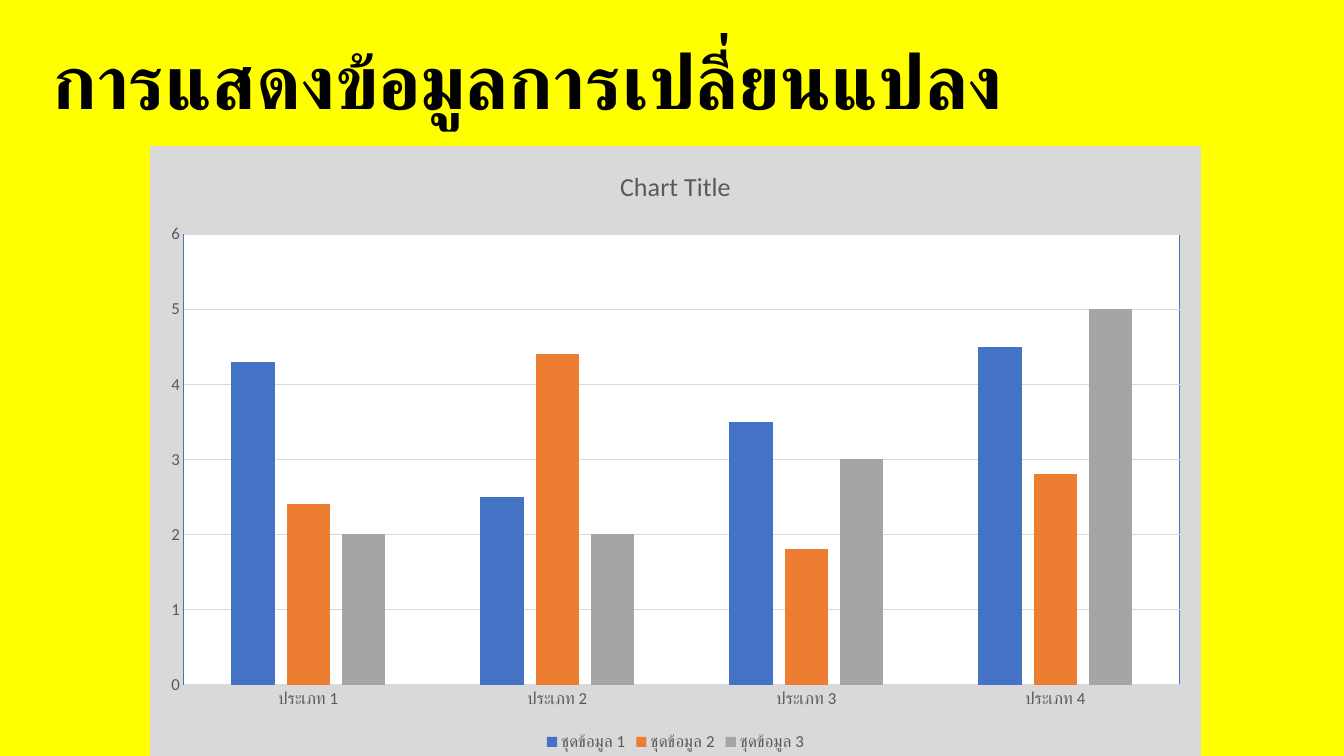
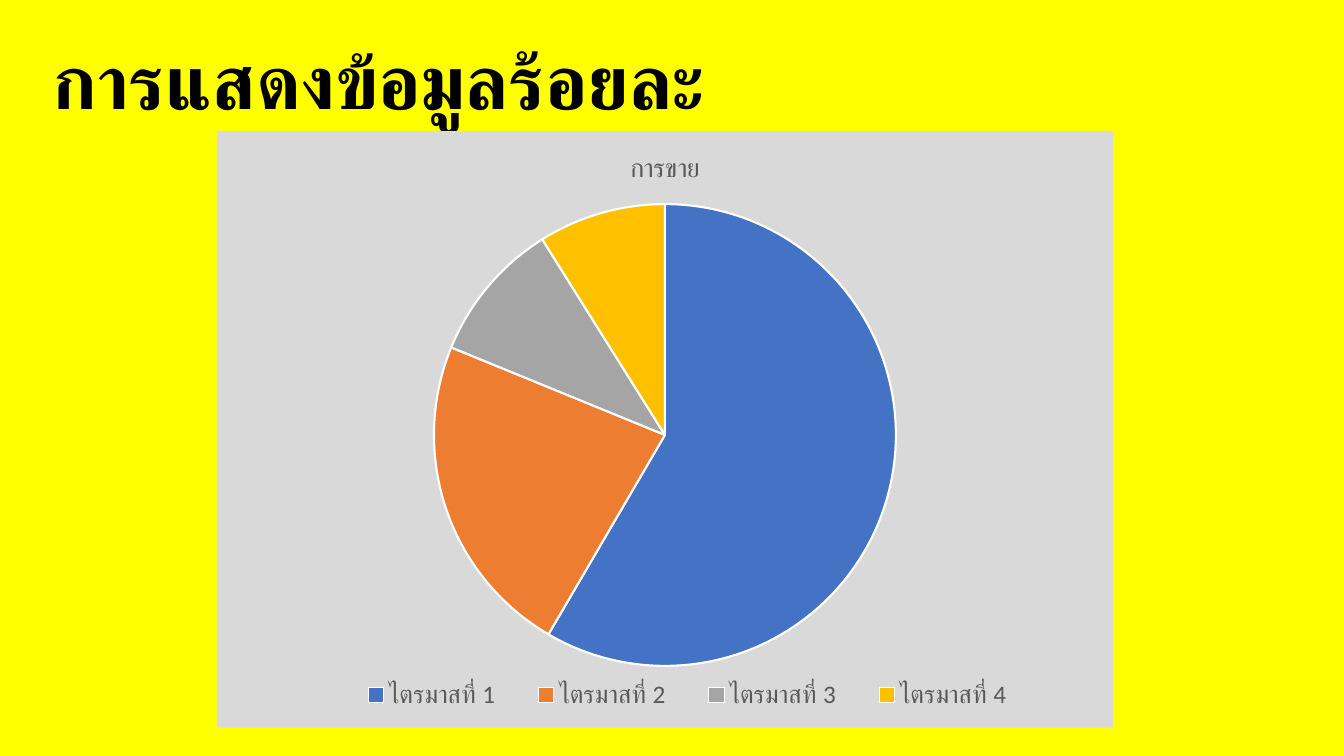
from dataclasses import dataclass
from lxml.etree import SubElement
from pptx import Presentation
from pptx.chart.data import CategoryChartData
from pptx.dml.color import RGBColor
from pptx.enum.chart import XL_CHART_TYPE, XL_LEGEND_POSITION, XL_TICK_MARK
from pptx.enum.text import MSO_ANCHOR, MSO_AUTO_SIZE, PP_ALIGN
from pptx.oxml import parse_xml
from pptx.oxml.ns import nsdecls, qn
from pptx.util import Inches, Pt


@dataclass(frozen=True)
class Theme:
    font: str = "Calibri"
    page: str = "FFFF00"
    ink: str = "000000"
    muted: str = "595959"
    rule: str = "D9D9D9"
    panel: str = "D9D9D9"
    white: str = "FFFFFF"
    accents: tuple = ("4472C4", "ED7D31", "A5A5A5", "FFC000")
    title: float = 54
    chart_title: float = 18.6
    axis: float = 12
    pie_legend: float = 18
    base: float = 10


T = Theme()
TITLE_BOX = (0.42, 0.29, 11.14, 1.01)
PIE_LEGEND_BOX = (0.13, 0.91, 0.79, 0.07)


def rgb(color):
    return RGBColor.from_string(color)


def style_font(font, size, color, bold=False):
    font.name = T.font
    font.size = Pt(size)
    font.bold = bold
    font.color.rgb = rgb(color)


def solid(fill, color):
    fill.solid()
    fill.fore_color.rgb = rgb(color)


def stroke(line, color, width):
    line.color.rgb = rgb(color)
    line.width = Pt(width)


def area_props(fill, line=None):
    paint = '<a:solidFill><a:srgbClr val="{}"/></a:solidFill>'.format
    edge = paint(line) if line else "<a:noFill/>"
    return parse_xml(
        f'<c:spPr {nsdecls("c", "a")}>{paint(fill)}'
        f'<a:ln w="0">{edge}</a:ln></c:spPr>'
    )


def add_title(s, text, box):
    sp = s.shapes.title
    sp.left, sp.top, sp.width, sp.height = map(Inches, box)
    tf = sp.text_frame
    tf.word_wrap = True
    tf.auto_size = MSO_AUTO_SIZE.SHAPE_TO_FIT_TEXT
    tf.vertical_anchor = MSO_ANCHOR.TOP
    p = tf.paragraphs[0]
    p.alignment = PP_ALIGN.LEFT
    r = p.add_run()
    r.text = text
    style_font(r.font, T.title, T.ink, True)
    SubElement(r.font._element, qn("a:cs"), typeface=T.font)


def add_chart(s, kind, box, title, cats, series, legend_size):
    data = CategoryChartData()
    data.categories = cats
    for name, vals in series:
        data.add_series(name, vals)
    chart = s.shapes.add_chart(kind, *map(Inches, box), data).chart
    style_font(chart.font, T.base, T.ink)
    chart.has_title = True
    r = chart.chart_title.text_frame.paragraphs[0].add_run()
    r.text = title
    style_font(r.font, T.chart_title, T.muted)
    chart.has_legend = True
    chart.legend.position = XL_LEGEND_POSITION.BOTTOM
    chart.legend.include_in_layout = False
    style_font(chart.legend.font, legend_size, T.muted)
    chart._chartSpace.find(qn("c:chart")).addnext(area_props(T.panel))
    return chart


def place_legend(chart, box):
    legend = chart._chartSpace.find(".//" + qn("c:legend"))
    for old in legend.findall(qn("c:layout")):
        legend.remove(old)
    modes = "".join(f'<c:{k}Mode val="edge"/>' for k in "xy")
    sizes = "".join(f'<c:{k} val="{v}"/>' for k, v in zip("xywh", box))
    legend.find(qn("c:legendPos")).addnext(parse_xml(
        f'<c:layout {nsdecls("c")}><c:manualLayout>{modes}{sizes}'
        "</c:manualLayout></c:layout>"
    ))


def style_axis(axis):
    axis.major_tick_mark = axis.minor_tick_mark = XL_TICK_MARK.NONE
    style_font(axis.tick_labels.font, T.axis, T.muted)


def add_columns(s, box, title, cats, series):
    chart = add_chart(s, XL_CHART_TYPE.COLUMN_CLUSTERED, box, title, cats, series, T.axis)
    plot = chart.plots[0]
    plot.vary_by_categories = False
    plot.gap_width, plot.overlap = 219, -27
    for ser, color in zip(plot.series, T.accents):
        solid(ser.format.fill, color)
    cat, val = chart.category_axis, chart.value_axis
    style_axis(cat)
    style_axis(val)
    stroke(cat.format.line, T.rule, 0.75)
    val.format.line.fill.background()
    val.has_major_gridlines = True
    stroke(val.major_gridlines.format.line, T.rule, 0.75)
    area = chart._chartSpace.find(".//" + qn("c:plotArea"))
    area.append(area_props(T.white, T.accents[0]))


def add_pie(s, box, title, cats, series):
    chart = add_chart(s, XL_CHART_TYPE.PIE, box, title, cats, series, T.pie_legend)
    place_legend(chart, PIE_LEGEND_BOX)
    plot = chart.plots[0]
    plot.vary_by_categories = True
    for i, color in enumerate(T.accents):
        fmt = plot.series[0].points[i].format
        solid(fmt.fill, color)
        stroke(fmt.line, T.white, 1.5)


def chart_slide(prs, title, draw, *args):
    s = prs.slides.add_slide(prs.slide_layouts[5])
    add_title(s, title, TITLE_BOX)
    draw(s, *args)


def numbered(word, count):
    return [f"{word} {i}" for i in range(1, count + 1)]


def main():
    prs = Presentation()
    prs.slide_width, prs.slide_height = Inches(13.33), Inches(7.5)
    solid(prs.slide_master.background.fill, T.page)
    values = [(4.3, 2.5, 3.5, 4.5), (2.4, 4.4, 1.8, 2.8), (2, 2, 3, 5)]
    chart_slide(
        prs, "การแสดงข้อมูลการเปลี่ยนแปลง", add_columns,
        (1.49, 1.45, 10.42, 6.05), "Chart Title", numbered("ประเภท", 4),
        list(zip(numbered("ชุดข้อมูล", 3), values)),
    )
    chart_slide(
        prs, "การแสดงข้อมูลร้อยละ", add_pie,
        (2.15, 1.3, 8.89, 5.92), "การขาย", numbered("ไตรมาสที่", 4),
        [("การขาย", (59, 23, 10, 9))],
    )
    prs.save("out.pptx")


if __name__ == "__main__":
    main()
